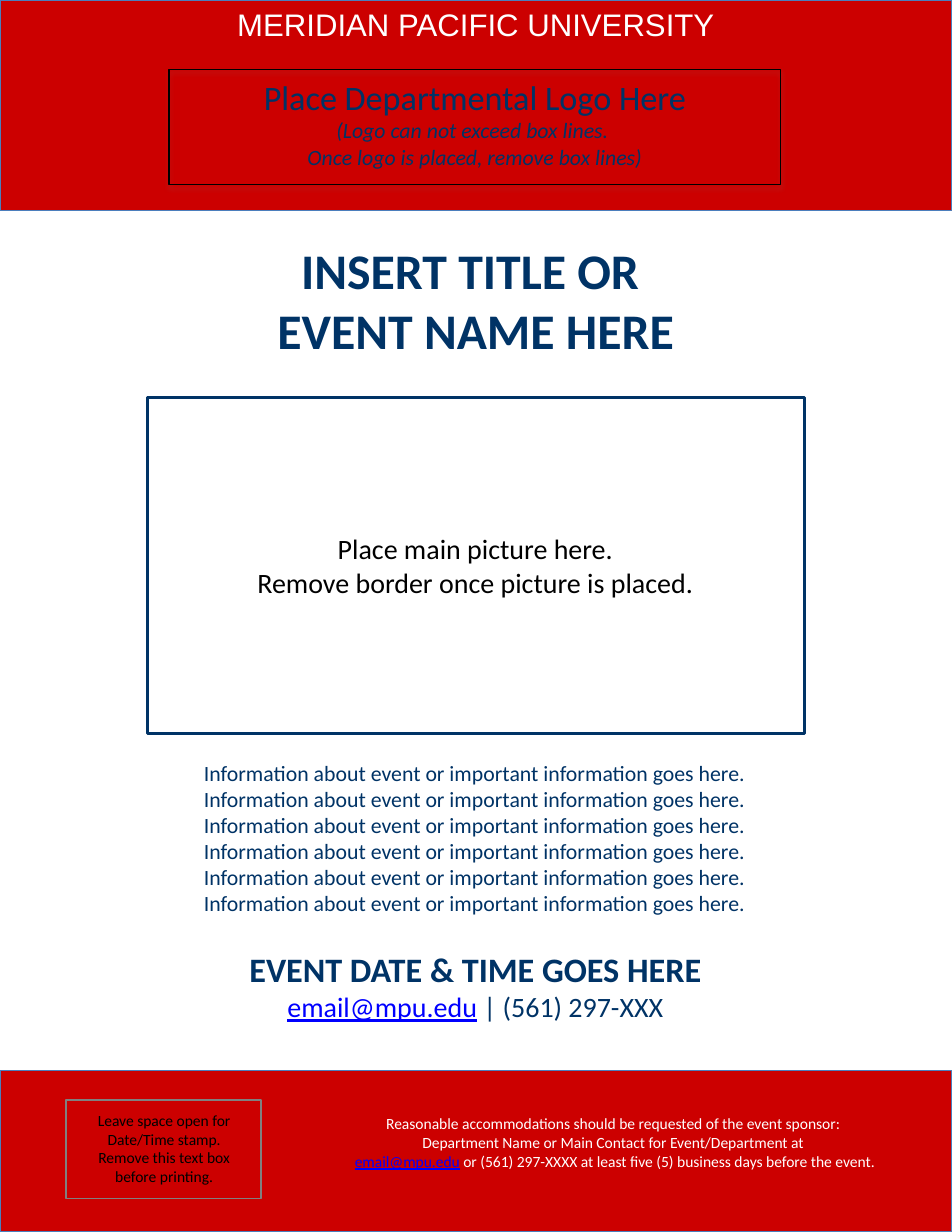
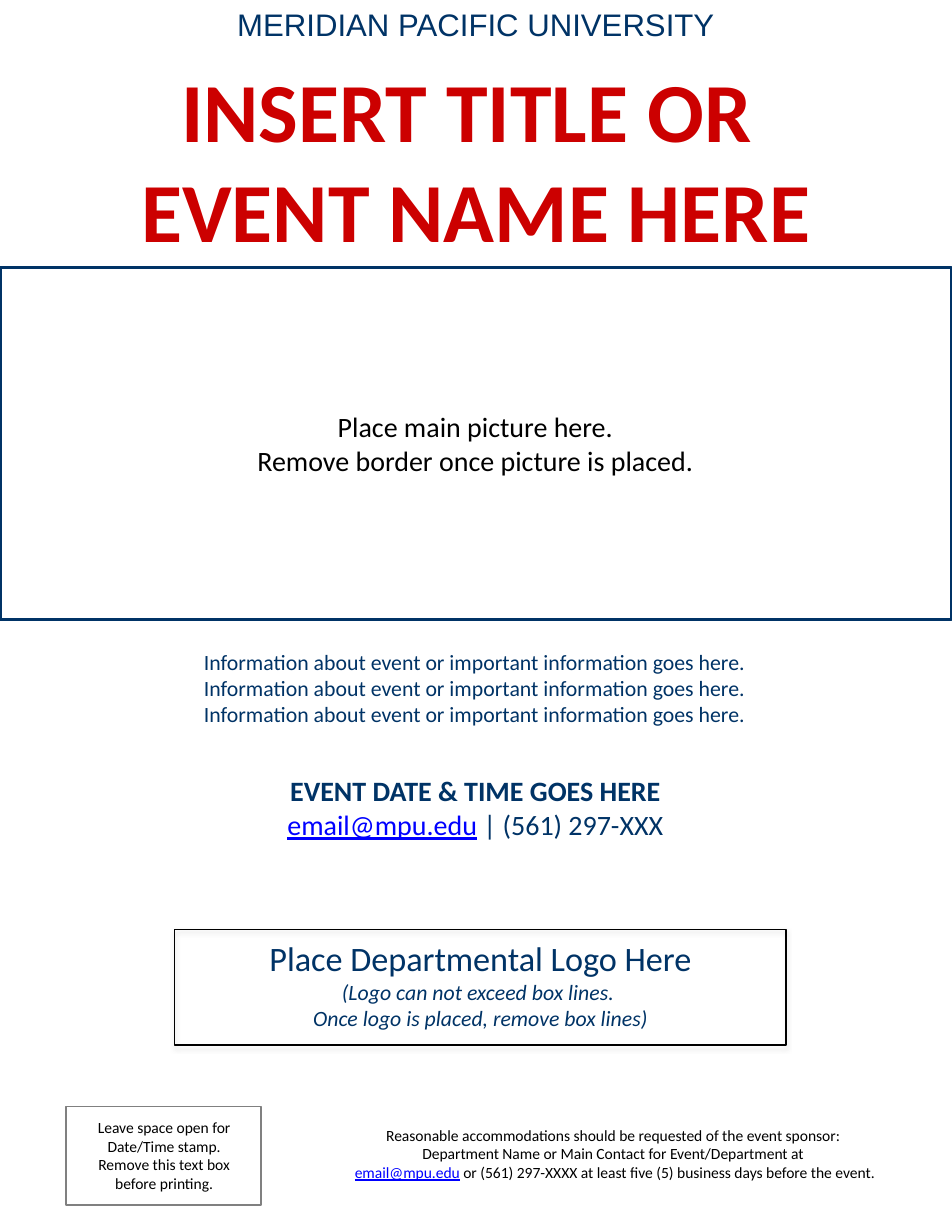
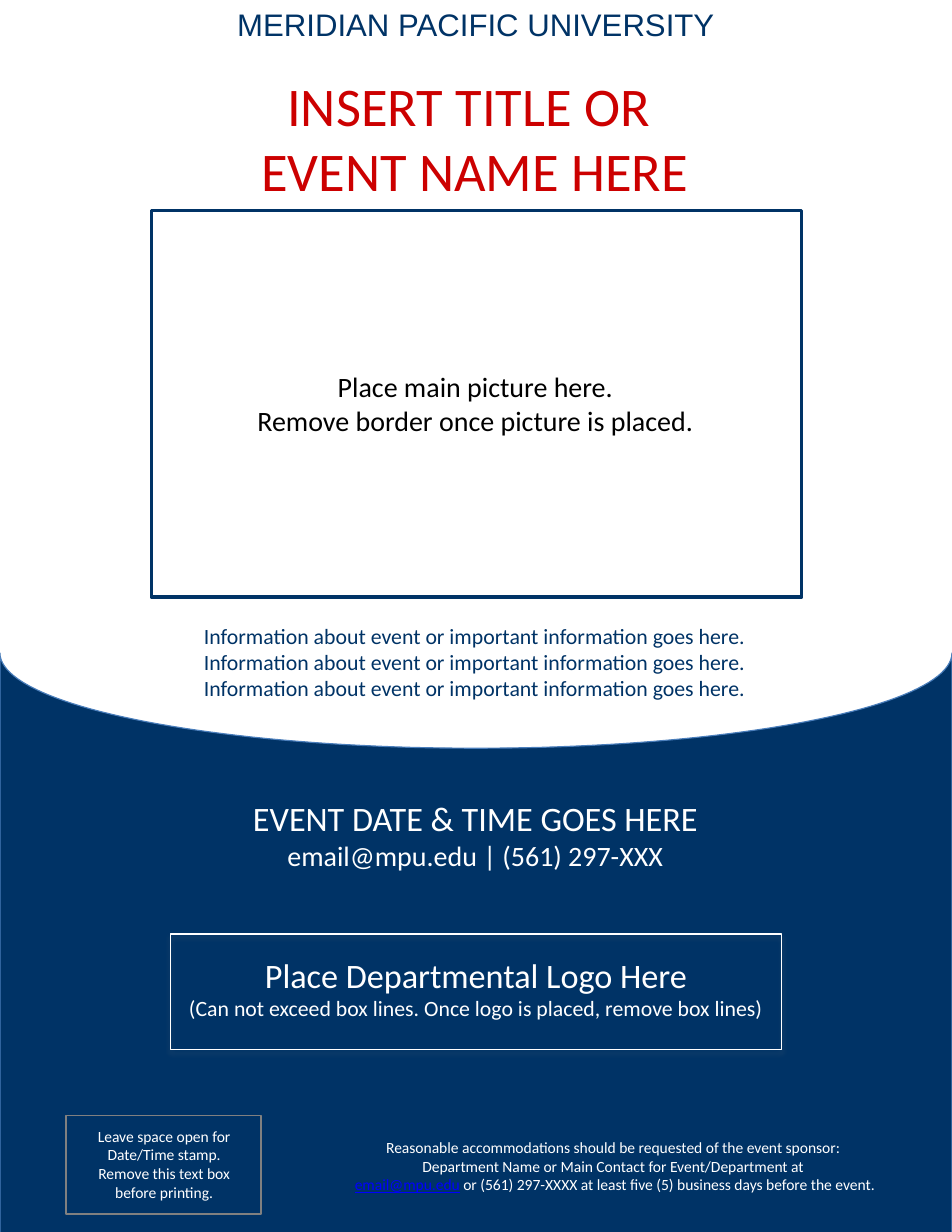
import math

import pptx
import pptx.dml.color
import pptx.enum.shapes
import pptx.enum.text
import pptx.oxml
import pptx.oxml.ns
import pptx.util

Pt = pptx.util.Pt
RGBColor = pptx.dml.color.RGBColor

NAVY = RGBColor(0x00, 0x33, 0x66)
RED = RGBColor(0xCC, 0x00, 0x00)
WHITE = RGBColor(0xFF, 0xFF, 0xFF)
BLACK = RGBColor(0x00, 0x00, 0x00)
GRAY = RGBColor(0x80, 0x80, 0x80)
LINK = RGBColor(0x00, 0x00, 0xFF)
EDGE = RGBColor(0x4B, 0x7E, 0xBC)
RIM = RGBColor(0x4A, 0x7E, 0xBB)

WIDE, HIGH = 612, 792
MAIL = "email@mpu.edu"
INFO = "Information about event or important information goes here."
SHADOW = (
    '<a:outerShdw xmlns:a="http://schemas.openxmlformats.org/drawingml/2006/main" '
    'blurRad="39370" dist="22860" dir="5400000" rotWithShape="0">'
    '<a:srgbClr val="808080"><a:alpha val="35000"/></a:srgbClr></a:outerShdw>'
)


class Flyer:
    def __init__(self):
        self.deck = pptx.Presentation()
        self.deck.slide_width, self.deck.slide_height = Pt(WIDE), Pt(HIGH)
        self.slide = None

    def page(self):
        self.slide = self.deck.slides.add_slide(self.deck.slide_layouts[6])

    def paint(self, shape, fill, line, width):
        shape.shadow.inherit = False
        if fill is None:
            shape.fill.background()
        else:
            shape.fill.solid()
            shape.fill.fore_color.rgb = fill
        shape.line.color.rgb = line
        shape.line.width = Pt(width)
        return shape

    def box(self, area, fill, line, width):
        kind = pptx.enum.shapes.MSO_SHAPE.RECTANGLE
        shape = self.slide.shapes.add_shape(kind, *map(Pt, area))
        return self.paint(shape, fill, line, width)

    def text(self, area, paras, **base):
        frame = self.slide.shapes.add_textbox(*map(Pt, area)).text_frame
        frame.word_wrap = True
        frame.auto_size = pptx.enum.text.MSO_AUTO_SIZE.SHAPE_TO_FIT_TEXT
        for num, parts in enumerate(paras):
            para = frame.paragraphs[0] if num == 0 else frame.add_paragraph()
            para.alignment = pptx.enum.text.PP_ALIGN.CENTER
            for part in [parts] if isinstance(parts, str) else parts:
                words, style = (part, {}) if isinstance(part, str) else part
                if words == "\n":
                    para.add_line_break()
                else:
                    self.style(para, words, {"name": "Calibri", **base, **style})

    def style(self, para, words, form):
        run = para.add_run()
        run.text = words
        for key, val in form.items():
            if key == "color":
                run.font.color.rgb = val
            else:
                setattr(run.font, key, Pt(val) if key == "size" else val)

    def head(self, color):
        self.text((0, 0, WIDE, 31.5), ["MERIDIAN PACIFIC UNIVERSITY"],
                  name="Arial", size=20, color=color)

    def title(self, left, top, high, **form):
        self.text((left, top, WIDE, high), ["INSERT TITLE OR ", "EVENT NAME HERE"], **form)

    def main(self, area, top):
        self.box(area, None, NAVY, 2)
        self.text((152.6, top, 306, 51),
                  ["Place main picture here.", "Remove border once picture is placed."],
                  size=18, color=BLACK)

    def info(self, top, high, count):
        self.text((108.7, top, 393, high), [f"{INFO} {INFO}"] + [INFO] * (count - 2),
                  size=14, color=NAVY)

    def date(self, top, high, size, color, bold, link):
        mail = {"color": LINK, "underline": True} if link else {}
        self.text((131, top, 349.2, high),
                  [[("EVENT DATE & TIME GOES HERE", {"size": size, "bold": bold})],
                   [(MAIL, mail), " | (561) 297-XXX"]],
                  size=18, color=color)

    def logo(self, left, top, inset, drop, color, line, rules):
        small = {"size": 14, "italic": len(rules) > 1}
        first, *rest = [(rule, small) for rule in rules]
        self.text((left + inset, top + drop, 387.4, 67.7),
                  [["Place Departmental Logo Here", "\n", first]] + [[part] for part in rest],
                  size=22, color=color)
        shape = self.box((left, top, 393, 74.2), None, line, 0.75)
        glow = shape.element.spPr.find(pptx.oxml.ns.qn("a:effectLst"))
        glow.append(pptx.oxml.parse_xml(SHADOW))

    def stamp(self, top, color):
        self.box((42.5, top, 125.3, 63.4), None, GRAY, 1)
        self.text((52.6, top + 3.6, 105.8, 56.2),
                  ["Leave space open for Date/Time stamp. Remove this text box before printing."],
                  size=10, color=color)

    def note(self, top, color):
        self.text((198.7, top, 393, 44),
                  ["Reasonable accommodations should be requested of the event sponsor: ",
                   "Department Name or Main Contact for Event/Department at ",
                   [(MAIL, {"color": LINK, "underline": True}),
                    " or (561) 297-XXXX at least five (5) business days before the event."]],
                  size=10, color=color)

    def wave(self, top, depth, base):
        half = WIDE / 2
        turns = [math.pi * (1 - step / 90) for step in range(91)]
        curve = [(Pt(half + half * math.cos(turn)), Pt(top + depth * math.sin(turn)))
                 for turn in turns]
        pen = self.slide.shapes.build_freeform(*curve[0])
        pen.add_line_segments(curve[1:] + [(Pt(WIDE), Pt(base)), (0, Pt(base))], close=True)
        self.paint(pen.convert_to_shape(), NAVY, RIM, 0.75)


def main():
    rules = ["(Logo can not exceed box lines. ", "Once logo is placed, remove box lines)"]
    flyer = Flyer()

    flyer.page()
    for top, high in ((688.3, 103.7), (0, 135.4)):
        flyer.box((0, top, WIDE, high), RED, EDGE, 0.75)
    flyer.title(0, 150.5, 85, size=32, color=NAVY, bold=True)
    flyer.info(484.6, 126, 6)
    flyer.note(712.8, WHITE)
    flyer.date(606.2, 55.4, 22, NAVY, True, True)
    flyer.main((95, 255.6, 422, 216), 338.4)
    flyer.stamp(707, BLACK)
    flyer.logo(108.7, 44.6, 2.9, 0.8, NAVY, BLACK, rules)
    flyer.head(WHITE)

    flyer.page()
    flyer.title(0, 33.8, 138.2, size=54, color=RED, bold=True)
    flyer.info(413.3, 58.3, 3)
    flyer.note(720, BLACK)
    flyer.date(493.9, 51, 18, NAVY, True, True)
    flyer.main((0, 172, WIDE, 226), 260)
    flyer.stamp(711.4, BLACK)
    flyer.logo(112.3, 597.6, 2.9, 1.4, NAVY, BLACK, rules)
    flyer.head(NAVY)

    flyer.page()
    flyer.wave(419.8, 61.2, 797)
    flyer.title(-0.7, 42.5, 92.2, size=35, color=RED)
    flyer.info(396.7, 58.3, 3)
    flyer.note(727.9, WHITE)
    flyer.date(509, 55.4, 22, WHITE, False, False)
    flyer.main((97.2, 135.4, 418.3, 248.4), 234)
    flyer.logo(109.4, 600.5, 2.9, 9.3, WHITE, WHITE,
               ["(Can not exceed box lines. Once logo is placed, remove box lines)"])
    flyer.stamp(717.1, WHITE)
    flyer.head(NAVY)

    flyer.deck.save("out.pptx")


if __name__ == "__main__":
    main()
